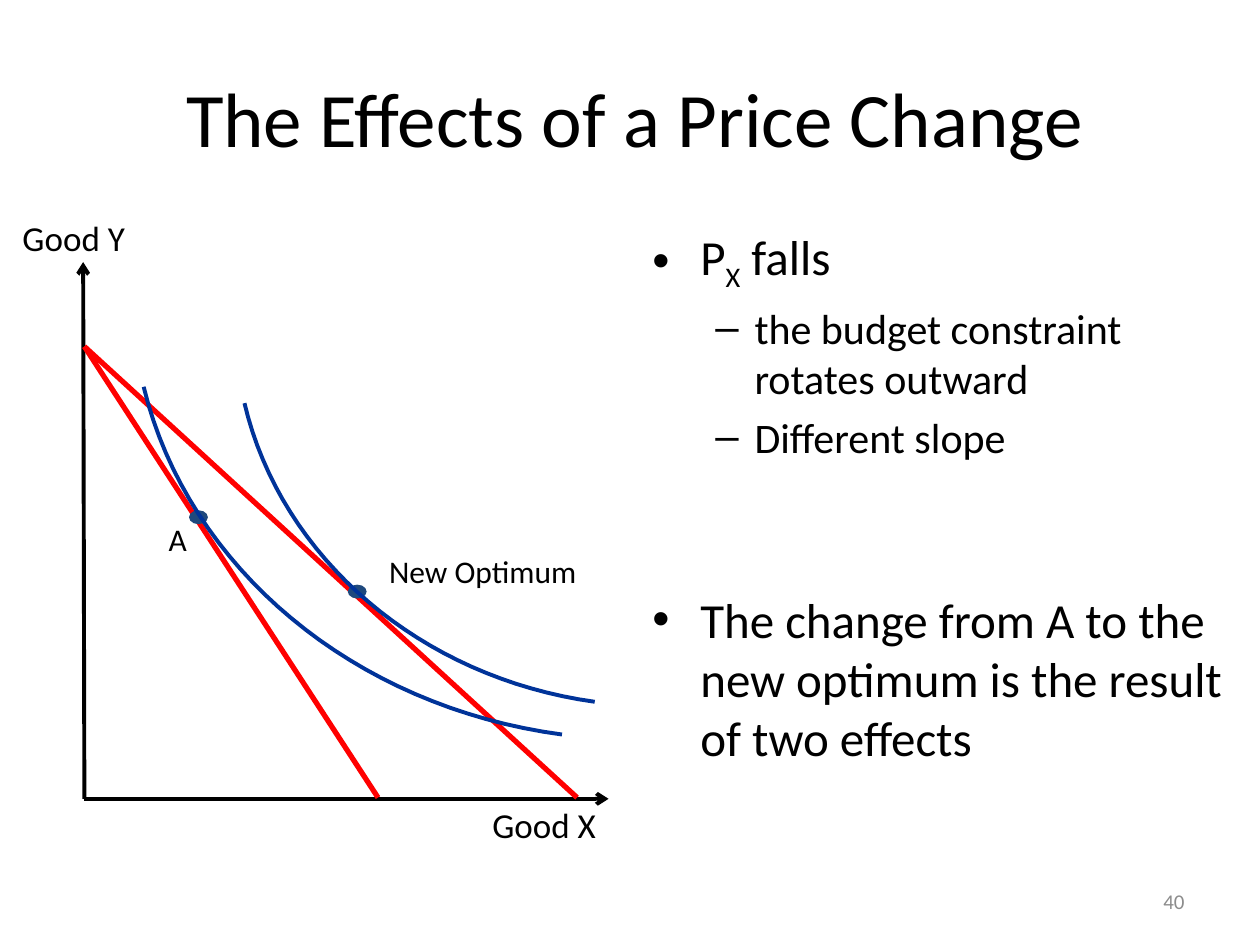
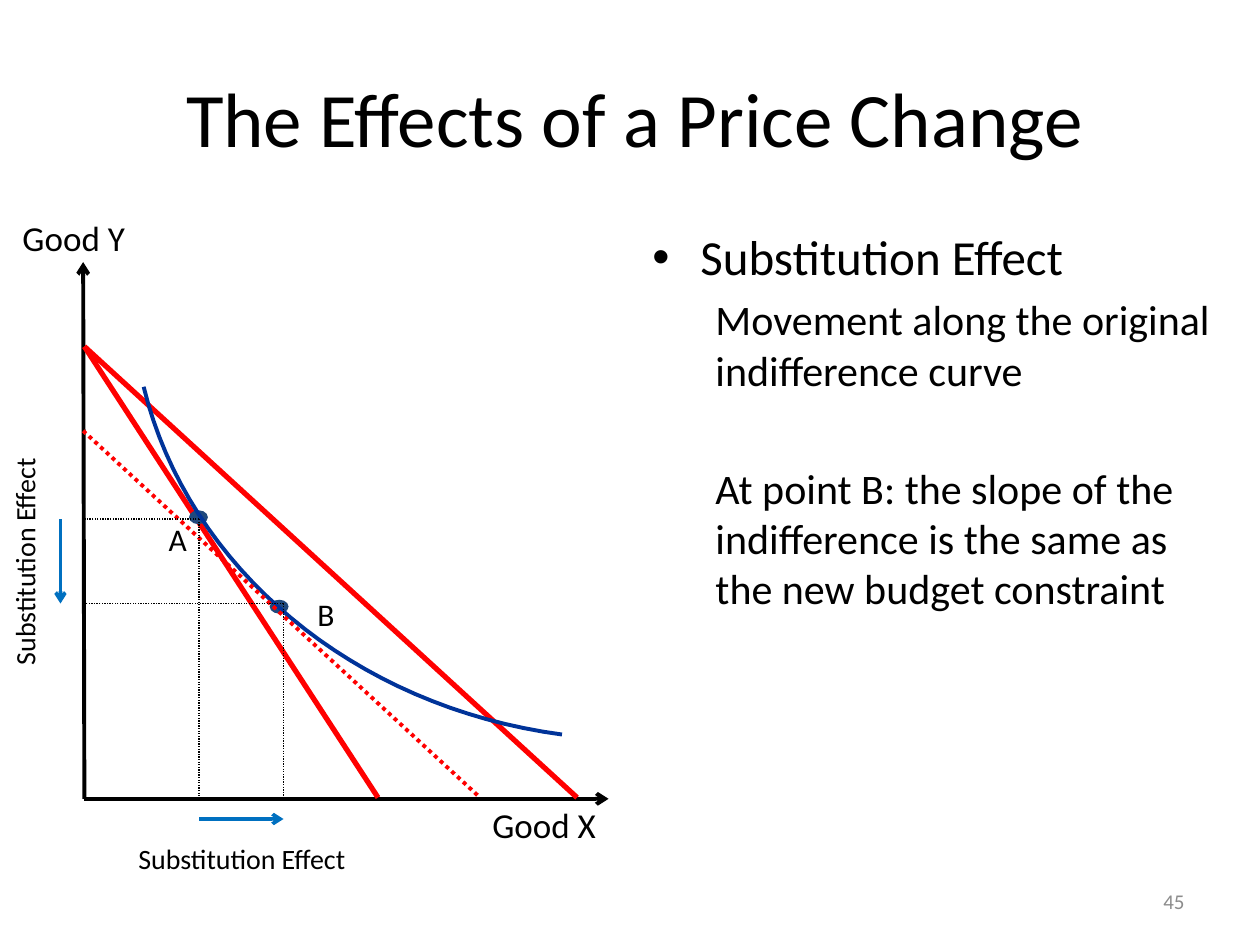
"""Build two slides on the effects of a price change, with indifference curve diagrams."""
from lxml.etree import SubElement
from pptx import Presentation
from pptx.dml.color import RGBColor
from pptx.enum.dml import MSO_LINE
from pptx.enum.shapes import MSO_CONNECTOR, MSO_SHAPE
from pptx.enum.text import MSO_ANCHOR, PP_ALIGN
from pptx.oxml.ns import qn
from pptx.util import Inches, Pt

COLORS = {
    "text": "000000",
    "axis": "000000",
    "guide": "000000",
    "budget": "FF0000",
    "curve": "003399",
    "point": "1F497D",
    "shift": "0070C0",
    "number": "8C8C8C",
}
FONT = "Calibri"
TITLE = "The Effects of a Price Change"
CURVE_STEPS = 32
ORIGIN_X, ORIGIN_Y = 0.67, 6.34
BUDGET_TOP, BUDGET_BOTTOM = 2.75, 6.33
POINT_WIDTH, POINT_HEIGHT = 0.15, 0.11
A_X, A_Y = 1.58, 4.12
B_X, B_Y = 2.25, 4.79

INDENTS = {"•": (0.38, -0.38), "–": (0.81, -0.31), "": (0.5, 0)}
ORIGINAL_CURVE = [(4.46, 5.83), (2.81, 5.61), (1.49, 4.51), (1.14, 3.07)]
HIGHER_CURVE = [(4.72, 5.57), (3.34, 5.38), (2.23, 4.43), (1.94, 3.2)]

SLIDES = [
    {
        "number": "40",
        "body": [
            ("•", ["P", "X", " falls"], 28, 5.6),
            ("–", ["the budget constraint rotates outward"], 24, 4.8),
            ("–", ["Different slope"], 24, 4.8),
            ("•", ["The change from A to the new optimum is the result of two effects"], 28, 73),
        ],
        "curves": [HIGHER_CURVE, ORIGINAL_CURVE],
        "points": [(1.5, 4.05), (2.76, 4.64)],
        "labels": [("A", 1.24, 4.08, 0.35), ("New Optimum", 2.99, 4.33, 1.71)],
        "substitution": False,
    },
    {
        "number": "45",
        "body": [
            ("•", ["Substitution Effect"], 28, 5.6),
            ("", ["Movement along the original indifference curve"], 24, 4.8),
            ("", ["At point B: the slope of the indifference is the same as the new budget constraint"], 24, 38.5),
        ],
        "curves": [ORIGINAL_CURVE],
        "points": [(1.5, 4.05), (2.14, 4.76)],
        "labels": [("A", 1.24, 4.08, 0.35), ("B", 2.42, 4.67, 0.34)],
        "substitution": True,
    },
]


def add_text(page, at, text, size, color="text", align=PP_ALIGN.LEFT, anchor=MSO_ANCHOR.TOP, wrap=True):
    box = page.shapes.add_textbox(*[Inches(length) for length in at])
    frame = box.text_frame
    frame.text = text
    frame.word_wrap = wrap
    frame.vertical_anchor = anchor
    paragraph = frame.paragraphs[0]
    paragraph.alignment = align
    paragraph.font.name = FONT
    paragraph.font.size = Pt(size)
    for span in paragraph.runs:
        span.font.name = FONT
        span.font.size = Pt(size)
        span.font.color.rgb = RGBColor.from_string(COLORS[color])
    return box


def add_line(page, start, end, color, width, arrow=False, dotted=False):
    line = page.shapes.add_connector(MSO_CONNECTOR.STRAIGHT, *[Inches(length) for length in start + end])
    line.line.color.rgb = RGBColor.from_string(COLORS[color])
    line.line.width = Pt(width)
    if dotted:
        line.line.dash_style = MSO_LINE.ROUND_DOT
    if arrow:
        SubElement(line.line._get_or_add_ln(), qn("a:tailEnd"), type="arrow")
    SubElement(line._element.spPr, qn("a:effectLst"))


deck = Presentation()
deck.slide_width = Inches(10)
deck.slide_height = Inches(7.5)

for content in SLIDES:
    page = deck.slides.add_slide(deck.slide_layouts[6])
    add_text(page, (0.33, 0.3, 9.42, 1.25), TITLE, 44, align=PP_ALIGN.CENTER, anchor=MSO_ANCHOR.MIDDLE)

    body = page.shapes.add_textbox(Inches(5.08), Inches(1.75), Inches(4.75), Inches(5.25))
    body.text_frame.word_wrap = True
    for index, (bullet, parts, size, space) in enumerate(content["body"]):
        paragraph = body.text_frame.paragraphs[0] if index == 0 else body.text_frame.add_paragraph()
        paragraph.space_before = Pt(space)
        margin, indent = INDENTS[bullet]
        properties = paragraph._p.get_or_add_pPr()
        properties.set("marL", str(Inches(margin)))
        properties.set("indent", str(Inches(indent)))
        if bullet:
            SubElement(properties, qn("a:buFont"), typeface="Arial")
            SubElement(properties, qn("a:buChar"), char=bullet)
        for position, part in enumerate(parts):
            span = paragraph.add_run()
            span.text = part
            span.font.name = FONT
            span.font.size = Pt(size)
            span.font.color.rgb = RGBColor.from_string(COLORS["text"])
            if position == 1:
                span.font._element.set("baseline", "-25000")

    add_line(page, (ORIGIN_X, ORIGIN_Y), (0.66, 2.08), "axis", 2.25, arrow=True)
    add_line(page, (ORIGIN_X, ORIGIN_Y), (4.83, ORIGIN_Y), "axis", 2.25, arrow=True)
    for budget_end in (3, 4.58):
        add_line(page, (ORIGIN_X, BUDGET_TOP), (budget_end, BUDGET_BOTTOM), "budget", 3)

    for left, top in content["points"]:
        point = page.shapes.add_shape(
            MSO_SHAPE.OVAL, Inches(left), Inches(top), Inches(POINT_WIDTH), Inches(POINT_HEIGHT)
        )
        point.shadow.inherit = False
        point.fill.solid()
        point.fill.fore_color.rgb = RGBColor.from_string(COLORS["point"])
        point.line.fill.background()

    for controls in content["curves"]:
        vertices = []
        for step in range(CURVE_STEPS + 1):
            t = step / CURVE_STEPS
            weights = ((1 - t) ** 3, 3 * t * (1 - t) ** 2, 3 * t**2 * (1 - t), t**3)
            vertices.append(
                tuple(Inches(sum(w * c[axis] for w, c in zip(weights, controls))) for axis in (0, 1))
            )
        builder = page.shapes.build_freeform(*vertices[0])
        builder.add_line_segments(vertices[1:], close=False)
        curve = builder.convert_to_shape()
        curve.shadow.inherit = False
        curve.fill.background()
        curve.line.color.rgb = RGBColor.from_string(COLORS["curve"])
        curve.line.width = Pt(2.25)

    if content["substitution"]:
        add_line(page, (0.66, 3.42), (3.81, BUDGET_BOTTOM), "budget", 2.25, dotted=True)
        for x, y in ((A_X, A_Y), (B_X, B_Y)):
            add_line(page, (x, y), (ORIGIN_X, y), "guide", 0.75, dotted=True)
            add_line(page, (x, y), (x, 6.35), "guide", 0.75, dotted=True)
        add_line(page, (0.48, A_Y), (0.48, B_Y), "shift", 2, arrow=True)
        add_line(page, (A_X, 6.5), (B_X, 6.5), "shift", 2, arrow=True)
        add_text(page, (0.92, 6.63, 2, 0.37), "Substitution Effect", 16, align=PP_ALIGN.CENTER)
        side_label = add_text(page, (0.01, 3.42, 0.47, 2.08), "Substitution Effect", 16, align=PP_ALIGN.CENTER)
        side_label.text_frame._txBody.bodyPr.set("vert", "vert270")

    for text, left, top, width in content["labels"]:
        add_text(page, (left, top, width, 0.4), text, 18, wrap=False)
    add_text(page, (0.08, 1.67, 1.02, 0.44), "Good Y", 20, wrap=False)
    add_text(page, (3.81, 6.33, 1.03, 0.44), "Good X", 20, wrap=False)
    add_text(
        page, (7.17, 6.95, 2.33, 0.4), content["number"], 12, "number", PP_ALIGN.RIGHT, MSO_ANCHOR.MIDDLE
    )

deck.save("out.pptx")
